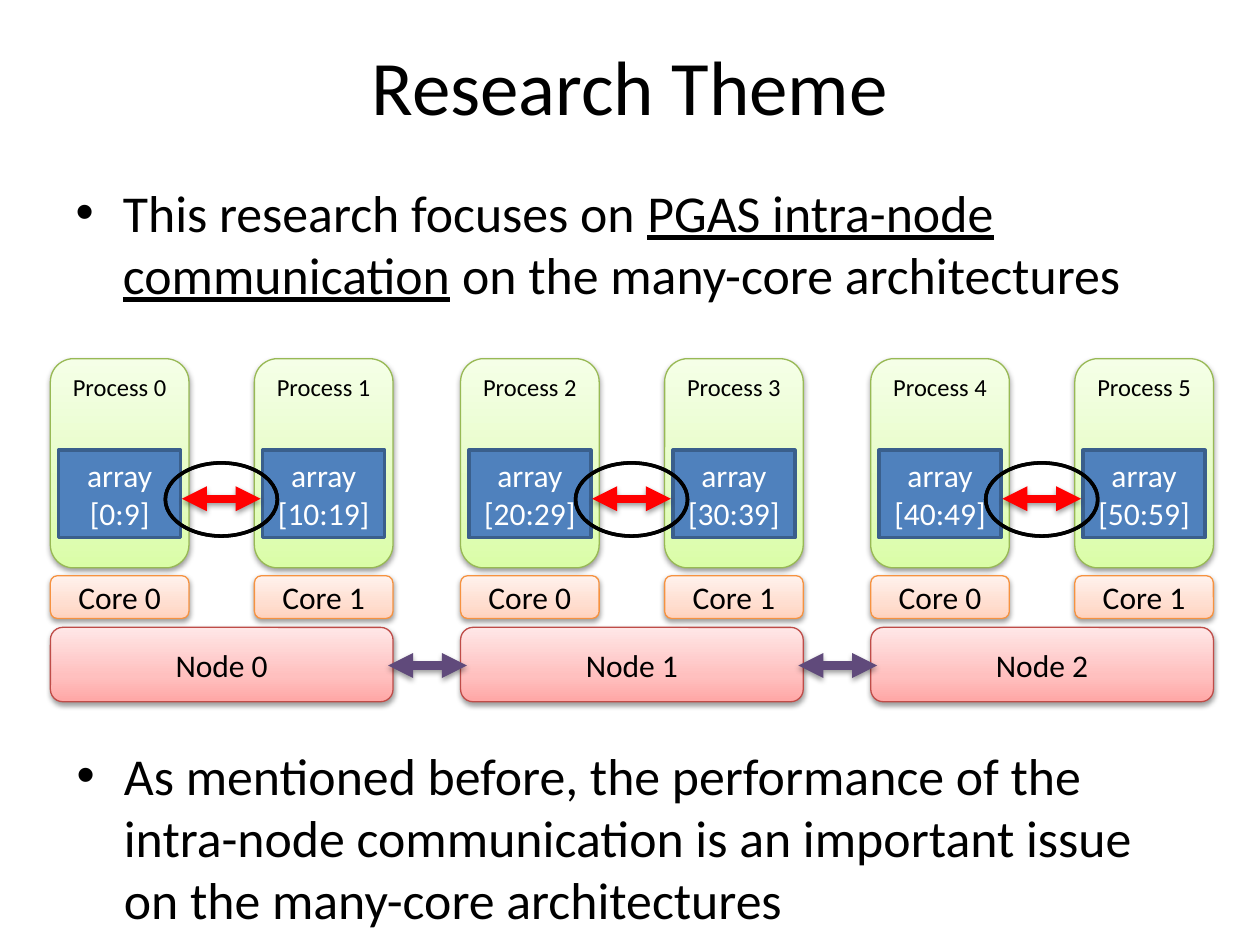
from copy import deepcopy
from dataclasses import dataclass

from lxml.etree import SubElement
from pptx import Presentation
from pptx.dml.color import RGBColor
from pptx.enum.shapes import MSO_CONNECTOR, MSO_SHAPE
from pptx.enum.text import MSO_ANCHOR, MSO_AUTO_SIZE, PP_ALIGN
from pptx.oxml.ns import qn
from pptx.util import Pt


@dataclass(frozen=True)
class Theme:
    font: str = "Calibri"
    ink: str = "000000"
    paper: str = "FFFFFF"
    array: str = "4F81BD"
    edge: str = "3A5F8C"
    local: str = "FF0000"
    remote: str = "604A7B"
    # Outline, then gradient colours from bottom to top
    node: tuple = ("BF4C48", "FFA6A5", "FFC0BF", "FFE7E7")
    process: tuple = ("98B955", "DAFDA7", "E4FCC2", "F5FFE7")
    core: tuple = ("F69240", "FFD2BD", "FFDED0", "FFF2ED")
    title: float = 44
    body: float = 29.6
    label: float = 18
    small: float = 14


def rgb(code):
    return RGBColor.from_string(code)


def write(frame, text, size, color=Theme.ink, align=PP_ALIGN.CENTER,
          anchor=MSO_ANCHOR.MIDDLE, bullet=False):
    """Fill a frame: newlines split paragraphs, underscores enclose underlined words."""
    frame.word_wrap = True
    frame.auto_size = MSO_AUTO_SIZE.NONE
    frame.vertical_anchor = anchor
    for i, line in enumerate(text.split("\n")):
        para = frame.add_paragraph() if i else frame.paragraphs[0]
        para.alignment = align
        if bullet:
            para.space_before = Pt(size * 0.2)
            props = para._p.get_or_add_pPr()
            props.set("marL", str(Pt(27)))
            props.set("indent", str(-Pt(27)))
            SubElement(props, qn("a:buFont"), typeface="Arial")
            SubElement(props, qn("a:buChar"), char="•")
        for j, part in enumerate(line.split("_")):
            run = para.add_run()
            run.text = part
            font = run.font
            font.name, font.size, font.color.rgb = Theme.font, Pt(size), rgb(color)
            if j % 2:
                font.underline = True


def shade(effects):
    """Add a soft shadow straight below to an effect list."""
    drop = SubElement(effects, qn("a:outerShdw"), blurRad="40000", dist="20000",
                      dir="5400000", rotWithShape="0")
    tone = SubElement(drop, qn("a:srgbClr"), val=Theme.ink)
    SubElement(tone, qn("a:alpha"), val="38000")


class Board:
    def __init__(self, slide, theme):
        self.slide, self.theme = slide, theme
        self.shapes = slide.shapes

    def place(self, shape, left, top, width, height):
        shape.left, shape.top = Pt(left), Pt(top)
        shape.width, shape.height = Pt(width), Pt(height)

    def title(self, text, *box):
        shape = self.shapes.title
        self.place(shape, *box)
        write(shape.text_frame, text, self.theme.title)

    def body(self, shape, text, *box):
        self.place(shape, *box)
        write(shape.text_frame, text, self.theme.body, align=PP_ALIGN.LEFT,
              anchor=MSO_ANCHOR.TOP, bullet=True)

    def shape(self, kind, box, fill, edge, width):
        shape = self.shapes.add_shape(kind, *map(Pt, box))
        shape.shadow.inherit = False
        shape.fill.solid()
        shape.fill.fore_color.rgb = rgb(fill)
        shape.line.color.rgb = rgb(edge)
        shape.line.width = Pt(width)
        return shape

    def card(self, text, box, tones, size, anchor=MSO_ANCHOR.MIDDLE):
        """Rounded box with a three-stop gradient and a shadow."""
        edge, *stops = tones
        shape = self.shape(MSO_SHAPE.ROUNDED_RECTANGLE, box, stops[0], edge, 0.75)
        shape.fill.gradient()
        shape.fill.gradient_angle = 90
        row = shape.element.spPr.find(".//" + qn("a:gsLst"))
        row.append(deepcopy(row[0]))
        for stop, tone, spot in zip(shape.fill.gradient_stops, stops, (0, 0.35, 1)):
            stop.color.rgb, stop.position = rgb(tone), spot
        shade(shape.element.spPr.find(qn("a:effectLst")))
        write(shape.text_frame, text, size, anchor=anchor)

    def array(self, text, *box):
        theme = self.theme
        shape = self.shape(MSO_SHAPE.RECTANGLE, box, theme.array, theme.edge, 2)
        write(shape.text_frame, text, theme.label, theme.paper)

    def ring(self, *box):
        ink = self.theme.ink
        self.shape(MSO_SHAPE.DONUT, box, ink, ink, 2).adjustments[0] = 0

    def arrow(self, left, y, width, color):
        line = self.shapes.add_connector(
            MSO_CONNECTOR.STRAIGHT, Pt(left), Pt(y), Pt(left + width), Pt(y))
        line.line.color.rgb = rgb(color)
        line.line.width = Pt(4.75)
        props = line.element.spPr
        for end in ("a:headEnd", "a:tailEnd"):
            SubElement(props.find(qn("a:ln")), qn(end), type="triangle")
        shade(SubElement(props, qn("a:effectLst")))


def main():
    deck = Presentation()
    deck.slide_width, deck.slide_height = Pt(720), Pt(540)
    theme = Theme()
    board = Board(deck.slides.add_slide(deck.slide_layouts[1]), theme)

    board.title("Research Theme", 36, 11.5, 648, 73.5)
    board.body(board.slide.placeholders[1],
               "This research focuses on _PGAS intra-node communication_"
               " on the many-core architectures", 36, 99.5, 648, 87)

    wide, cell = 195.8, 79.2
    lefts = [28.8 + 234.4 * n for n in range(3)]
    for n, left in enumerate(lefts):
        board.card(f"Node {n}", (left, 358.5, wide, 42.5), theme.node, theme.label)
        for c in range(2):
            rank = 2 * n + c
            x = left + c * (wide - cell)
            first = 10 * rank
            board.card(f"Process {rank}", (x, 205, cell, 119.5), theme.process,
                       theme.small, MSO_ANCHOR.TOP)
            board.array(f"array\n[{first}:{first + 9}]", x + 4.7, 257.3, 69.8, 50)
            board.card(f"Core {c}", (x, 329, cell, 24.5), theme.core, theme.label)
        board.arrow(left + 75.2, 285, 45, theme.local)
        board.ring(left + 65.7, 264.5, 64, 41.8)
    for left in lefts[:-1]:
        board.arrow(left + wide - 2.8, 380.3, 45, theme.remote)

    board.body(board.shapes.add_textbox(0, 0, 0, 0),
               "As mentioned before, the performance of the intra-node communication"
               " is an important issue on the many-core architectures",
               36.7, 421.3, 648, 109.5)
    deck.save("out.pptx")


if __name__ == "__main__":
    main()
